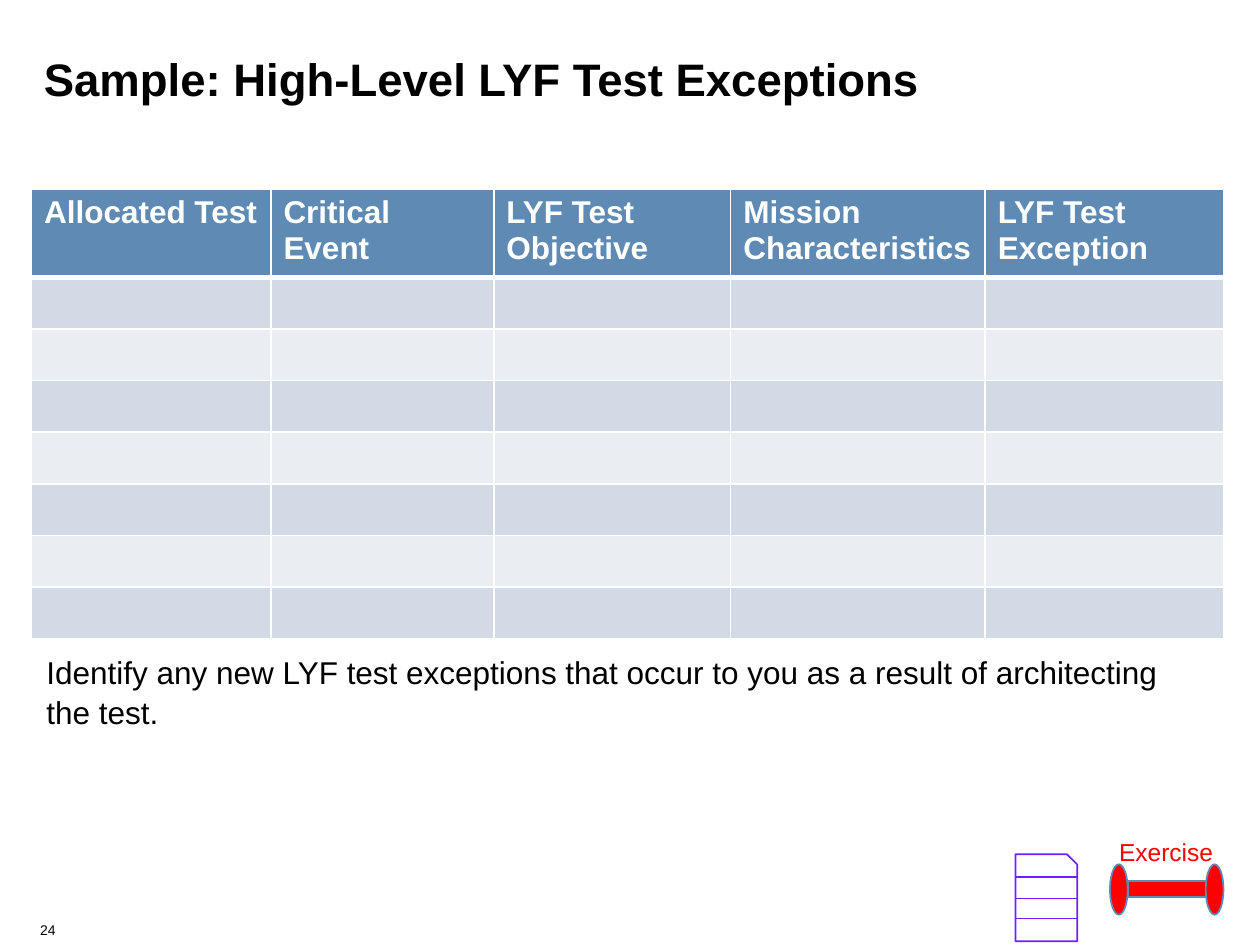
import pptx
import pptx.dml.color
import pptx.enum.shapes
import pptx.enum.text
import pptx.oxml
import pptx.oxml.ns
import pptx.util

Inches, Pt = pptx.util.Inches, pptx.util.Pt
SHAPE = pptx.enum.shapes.MSO_SHAPE
ALIGN = pptx.enum.text.PP_ALIGN
ANCHOR = pptx.enum.text.MSO_ANCHOR

TITLE = "Sample: High-Level LYF Test Exceptions"
HEADERS = ["Allocated Test", "Critical Event", "LYF Test Objective",
           "Mission Characteristics", "LYF Test Exception"]
COLUMN_WIDTHS = [1.9, 1.77, 1.88, 2.02, 1.89]
BODY_ROWS = 7
HEADER_HEIGHT, ROW_HEIGHT = 0.64, 0.41
NOTE = ("Identify any new LYF test exceptions that occur to you "
        "as a result of architecting the test.")
PAGE_NUMBER = "24"
EXERCISE = "Exercise"

THEME = {
    "font": "Arial",
    "title": 26, "body": 18, "label": 14, "number": 8,
    "black": "000000", "white": "FFFFFF", "blue": "5E8AB4",
    "bands": ["D2DAE5", "EAEDF2"], "purple": "6A20FF", "red": "FF0000",
}


def rgb(color):
    return pptx.dml.color.RGBColor.from_string(color)


def add_run(p, text, size, color, bold=False):
    r = p.add_run()
    r.text = text
    r.font.name = THEME["font"]
    r.font.size = Pt(size)
    r.font.bold = bold
    r.font.color.rgb = rgb(color)


def add_text(shapes, box, text, size, color, bold=False, align=ALIGN.LEFT,
             anchor=ANCHOR.TOP, spacing=1.0):
    tf = shapes.add_textbox(*map(Inches, box)).text_frame
    tf.word_wrap = True
    tf.vertical_anchor = anchor
    p = tf.paragraphs[0]
    p.alignment = align
    p.line_spacing = spacing
    add_run(p, text, size, color, bold)


def add_block(shapes, kind, box, fill, line):
    sp = shapes.add_shape(kind, *map(Inches, box))
    sp.shadow.inherit = False
    sp.fill.solid()
    sp.fill.fore_color.rgb = rgb(fill)
    sp.line.color.rgb = rgb(line)
    sp.line.width = Pt(1)


def set_borders(cell, **widths):
    """Draw white borders; widths maps each side (L, R, T, B) to points."""
    tcPr = cell._tc.get_or_add_tcPr()
    for side, width in widths.items():
        tcPr.append(pptx.oxml.parse_xml(
            f'<a:ln{side} {pptx.oxml.ns.nsdecls("a")} w="{Pt(width)}"><a:solidFill>'
            f'<a:srgbClr val="{THEME["white"]}"/></a:solidFill></a:ln{side}>'))


def add_exceptions_table(shapes):
    height = HEADER_HEIGHT + BODY_ROWS * ROW_HEIGHT
    table = shapes.add_table(
        BODY_ROWS + 1, len(HEADERS), Inches(0.25), Inches(1.5),
        Inches(sum(COLUMN_WIDTHS)), Inches(height)).table
    for column, width in zip(table.columns, COLUMN_WIDTHS):
        column.width = Inches(width)
    for i, row in enumerate(table.rows):
        row.height = Inches(ROW_HEIGHT if i else HEADER_HEIGHT)
        fill = THEME["bands"][(i - 1) % 2] if i else THEME["blue"]
        for cell in row.cells:
            set_borders(cell, L=1, R=1, T=3 if i == 1 else 1, B=1 if i else 3)
            cell.fill.solid()
            cell.fill.fore_color.rgb = rgb(fill)
    for cell, header in zip(table.rows[0].cells, HEADERS):
        add_run(cell.text_frame.paragraphs[0], header, THEME["body"], THEME["white"], True)


def add_form_icon(shapes):
    group = shapes.add_group_shape().shapes
    left, width = 8.06, 0.49
    add_block(group, SHAPE.SNIP_1_RECTANGLE, (left, 6.78, width, 0.69),
              THEME["white"], THEME["purple"])
    for y in (6.96, 7.13, 7.29):
        line = group.add_connector(
            pptx.enum.shapes.MSO_CONNECTOR.STRAIGHT,
            *map(Inches, (left, y, left + width, y)))
        line.line.color.rgb = rgb(THEME["purple"])
        line.line.width = Pt(1)
        line._element.spPr.append(pptx.oxml.parse_xml(
            f'<a:effectLst {pptx.oxml.ns.nsdecls("a")}/>'))


def add_dumbbell(shapes):
    group = shapes.add_group_shape().shapes
    add_block(group, SHAPE.RECTANGLE, (8.95, 6.99, 0.69, 0.13), THEME["red"], THEME["blue"])
    for x in (9.57, 8.81):
        add_block(group, SHAPE.OVAL, (x, 6.86, 0.14, 0.4), THEME["red"], THEME["blue"])
    add_text(group, (8.73, 6.59, 1.05, 0.34), EXERCISE, THEME["label"], THEME["red"],
             align=ALIGN.CENTER)


def main():
    prs = pptx.Presentation()
    prs.slide_width, prs.slide_height = Inches(10), Inches(7.5)
    s = prs.slides.add_slide(prs.slide_layouts[6])
    black = THEME["black"]
    add_text(s.shapes, (0.22, 7.26, 0.76, 0.24), PAGE_NUMBER, THEME["number"], black,
             anchor=ANCHOR.MIDDLE)
    add_text(s.shapes, (0.25, 0.3, 9, 0.64), TITLE, THEME["title"], black, bold=True,
             anchor=ANCHOR.MIDDLE)
    add_exceptions_table(s.shapes)
    add_form_icon(s.shapes)
    add_dumbbell(s.shapes)
    add_text(s.shapes, (0.27, 5.12, 9.05, 0.71), NOTE, THEME["body"], black, spacing=1.05)
    prs.save("out.pptx")


if __name__ == "__main__":
    main()
